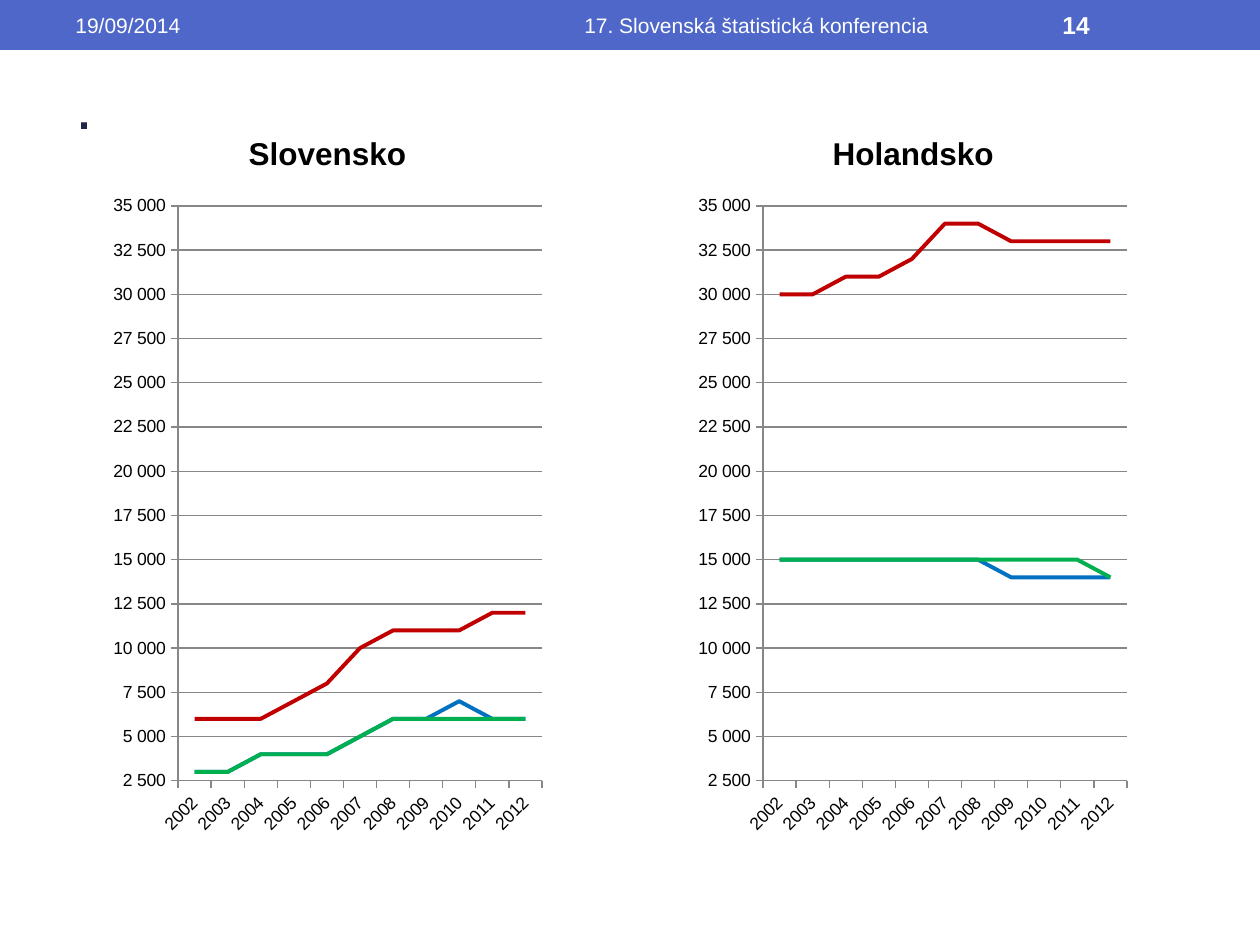
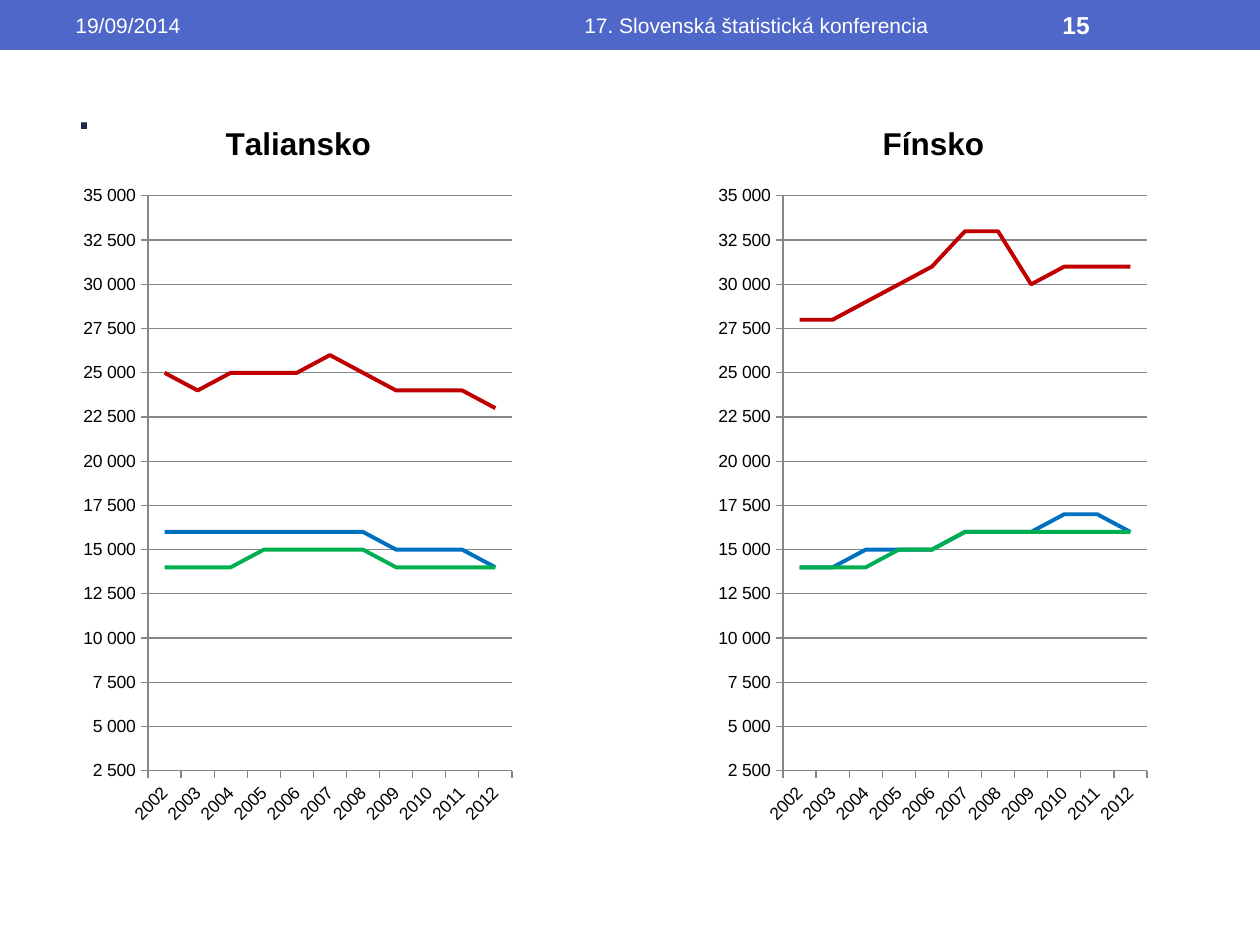
import pptx
import pptx.chart.data
import pptx.dml.color
import pptx.enum.chart
import pptx.enum.shapes
import pptx.enum.text
import pptx.oxml
import pptx.oxml.ns
import pptx.util
from dataclasses import dataclass


@dataclass(frozen=True)
class Theme:
    font: str = "Arial"
    band: str = "4E67C8"
    heading: str = "212745"
    on_band: str = "FFFFFF"
    chart_text: str = "000000"
    grid: str = "878787"
    series: tuple = ("C00000", "0070C0", "00B050")
    heading_size: int = 36
    chart_title_size: int = 18
    number_size: int = 14
    footer_size: int = 12
    axis_size: int = 10


THEME = Theme()
PX = 914400 / 126  # EMU per px
RGB = pptx.dml.color.RGBColor.from_string
Pt = pptx.util.Pt
ALIGN = pptx.enum.text.PP_ALIGN
ANCHOR = pptx.enum.text.MSO_ANCHOR
CHART_W, CHART_H = 446, 744
YEARS = [str(year) for year in range(2002, 2013)]

# Content: left edge, title offset and the three lines (in thousands) of each country
SLIDES = [
    (14, 106, [
        ("Slovensko", 105, 138, [
            [6, 6, 6, 7, 8, 10, 11, 11, 11, 12, 12],
            [3, 3, 4, 4, 4, 5, 6, 6, 7, 6, 6],
            [3, 3, 4, 4, 4, 5, 6, 6, 6, 6, 6]]),
        ("Holandsko", 690, 137, [
            [30, 30, 31, 31, 32, 34, 34, 33, 33, 33, 33],
            [15, 15, 15, 15, 15, 15, 15, 14, 14, 14, 14],
            [15, 15, 15, 15, 15, 15, 15, 15, 15, 15, 14]]),
    ]),
    (15, 96, [
        ("Taliansko", 75, 145, [
            [25, 24, 25, 25, 25, 26, 25, 24, 24, 24, 23],
            [16, 16, 16, 16, 16, 16, 16, 15, 15, 15, 14],
            [14, 14, 14, 15, 15, 15, 15, 14, 14, 14, 14]]),
        ("Fínsko", 710, 167, [
            [28, 28, 29, 30, 31, 33, 33, 30, 31, 31, 31],
            [14, 14, 15, 15, 15, 16, 16, 16, 17, 17, 16],
            [14, 14, 14, 15, 15, 16, 16, 16, 16, 16, 16]]),
    ]),
]


def add_text(slide, text, box, size, color, bold=False, align=ALIGN.LEFT, anchor=ANCHOR.MIDDLE):
    frame = slide.shapes.add_textbox(*[round(v * PX) for v in box]).text_frame
    frame.word_wrap = True
    frame.vertical_anchor = anchor
    frame.margin_top = frame.margin_bottom = 0
    frame.paragraphs[0].alignment = align
    run = frame.paragraphs[0].add_run()
    run.text = text
    run.font.name, run.font.size, run.font.bold = THEME.font, Pt(size), bold
    run.font.color.rgb = RGB(color)


def set_layout(element, index, target, **px):
    """Place a chart part by px inside the chart frame."""
    for old in element.findall(pptx.oxml.ns.qn("c:layout")):
        element.remove(old)
    parts = f'<c:layoutTarget val="{target}"/>' if target else ""
    parts += '<c:xMode val="edge"/><c:yMode val="edge"/>'
    for key, value in px.items():
        parts += f'<c:{key} val="{value / (CHART_W if key in "xw" else CHART_H):.4f}"/>'
    element.insert(index, pptx.oxml.parse_xml(
        f'<c:layout {pptx.oxml.ns.nsdecls("c")}><c:manualLayout>{parts}</c:manualLayout></c:layout>'))


deck = pptx.Presentation()
deck.slide_width, deck.slide_height = round(1260 * PX), round(945 * PX)

for number, chart_top, countries in SLIDES:
    slide = deck.slides.add_slide(deck.slide_layouts[6])

    # Header band, heading and footer texts
    band = slide.shapes.add_shape(pptx.enum.shapes.MSO_SHAPE.RECTANGLE,
                                  0, 0, deck.slide_width, round(50 * PX))
    band.shadow.inherit = False
    band.fill.solid()
    band.fill.fore_color.rgb = RGB(THEME.band)
    band.line.fill.background()
    add_text(slide, ".", (63, 67, 1134, 136), THEME.heading_size, THEME.heading, anchor=ANCHOR.TOP)
    add_text(slide, "17. Slovenská štatistická konferencia", (473, 2, 567, 46),
             THEME.footer_size, THEME.on_band, align=ALIGN.CENTER)
    add_text(slide, str(number), (1050, 2, 147, 46), THEME.number_size, THEME.on_band, bold=True)
    add_text(slide, "19/09/2014", (63, 2, 400, 46), THEME.footer_size, THEME.on_band)

    # One line chart per country
    for country, left, title_left, lines in countries:
        data = pptx.chart.data.CategoryChartData()
        data.categories = YEARS
        for i, thousands in enumerate(lines, 1):
            data.add_series(f"Series {i}", [value * 1000 for value in thousands])
        chart = slide.shapes.add_chart(
            pptx.enum.chart.XL_CHART_TYPE.LINE,
            *[round(v * PX) for v in (left, chart_top, CHART_W, CHART_H)], data).chart
        chart.has_legend = False
        chart.font.name, chart.font.size = THEME.font, Pt(THEME.axis_size)
        chart.font.color.rgb = RGB(THEME.chart_text)

        # Country name above the plot
        chart.has_title = True
        name = chart.chart_title.text_frame.paragraphs[0].add_run()
        name.text = country
        name.font.name, name.font.size, name.font.bold = THEME.font, Pt(THEME.chart_title_size), True
        name.font.color.rgb = RGB(THEME.chart_text)
        chart_xml = chart.element.find(pptx.oxml.ns.qn("c:chart"))
        set_layout(chart_xml.find(pptx.oxml.ns.qn("c:title")), 1, None, x=title_left, y=21)
        set_layout(chart_xml.find(pptx.oxml.ns.qn("c:plotArea")), 0, "inner",
                   x=73, y=100, w=364, h=575)

        # Axes and gridlines
        scale = chart.value_axis
        scale.minimum_scale, scale.maximum_scale, scale.major_unit = 2500, 35000, 2500
        scale.has_major_gridlines = True
        scale.tick_labels.number_format = r"#\ ##0"
        scale.tick_labels.number_format_is_linked = False
        for axis in (scale, chart.category_axis):
            axis.major_tick_mark = pptx.enum.chart.XL_TICK_MARK.OUTSIDE
            axis.minor_tick_mark = pptx.enum.chart.XL_TICK_MARK.NONE
        for line in (scale.format.line, chart.category_axis.format.line,
                     scale.major_gridlines.format.line):
            line.color.rgb = RGB(THEME.grid)
            line.width = Pt(0.75)
        years = chart.category_axis.tick_labels
        years.font.size = Pt(THEME.axis_size)
        chart.category_axis._element.txPr.find(pptx.oxml.ns.qn("a:bodyPr")).set("rot", "-2700000")

        # Series lines
        chart.plots[0].vary_by_categories = False
        for series, color in zip(chart.plots[0].series, THEME.series):
            series.smooth = False
            series.marker.style = pptx.enum.chart.XL_MARKER_STYLE.NONE
            series.format.line.color.rgb = RGB(color)
            series.format.line.width = Pt(2.25)

deck.save("out.pptx")
